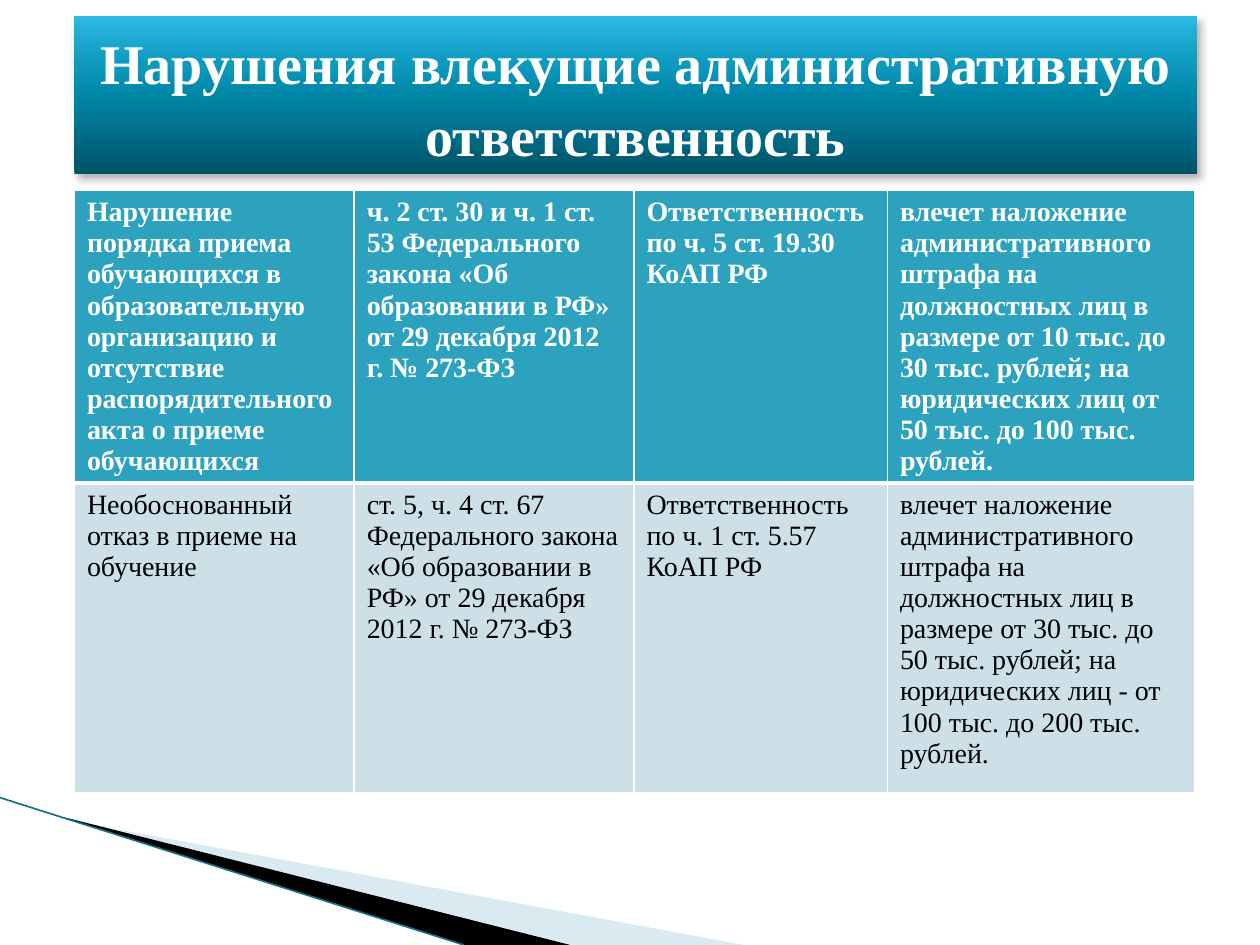
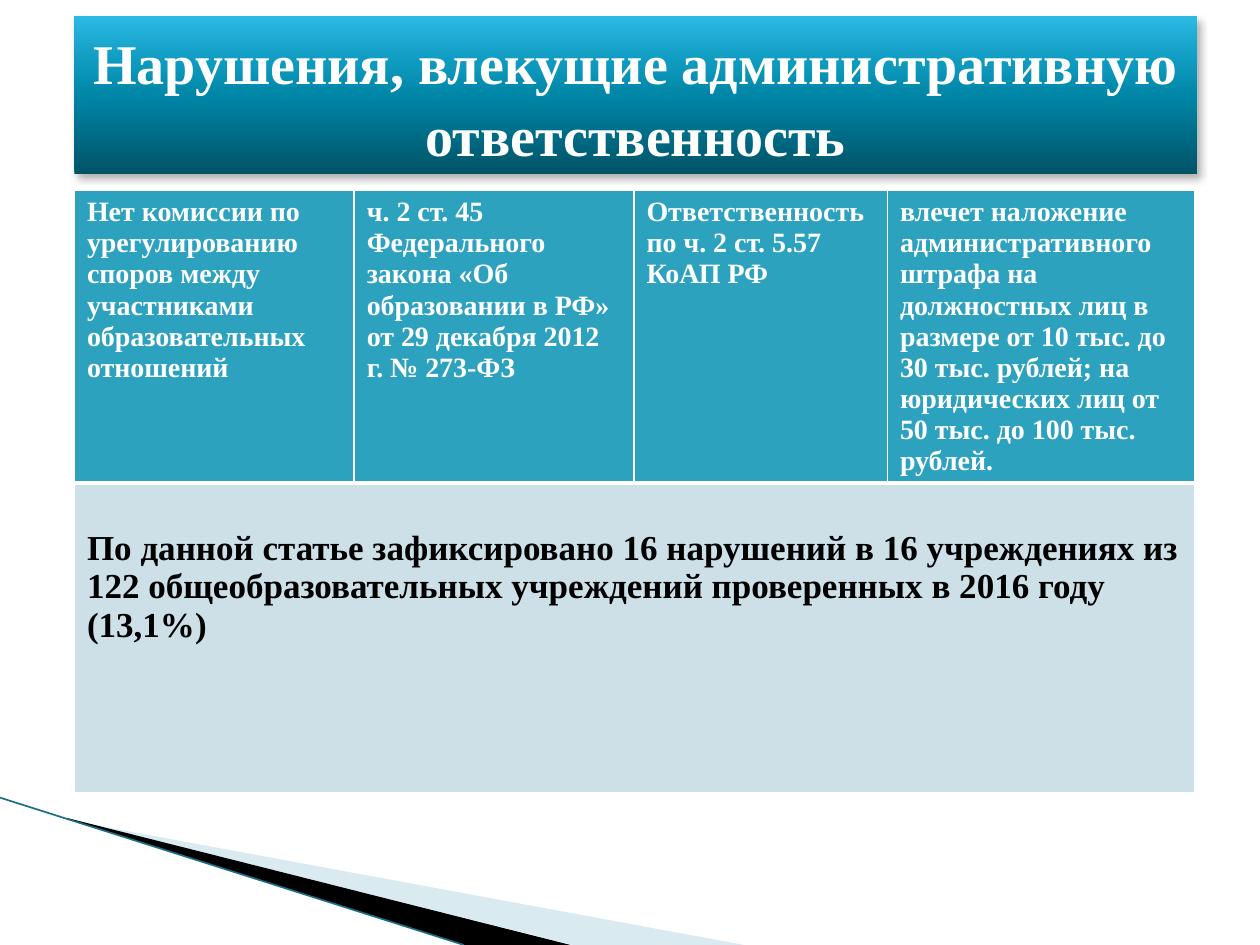
import pptx
import pptx.dml.color
import pptx.enum.dml
import pptx.enum.text
import pptx.oxml
import pptx.oxml.ns
import pptx.util
from lxml import etree

Cm = pptx.util.Cm
Pt = pptx.util.Pt
RGBColor = pptx.dml.color.RGBColor
qn = pptx.oxml.ns.qn

WHITE = RGBColor(0xFF, 0xFF, 0xFF)
BLACK = RGBColor(0x00, 0x00, 0x00)
HEADER_BLUE = RGBColor(0x2D, 0xA2, 0xBF)
BODY_BLUE = RGBColor(0xCD, 0xE0, 0xE8)
WEDGE_BLUE = RGBColor(0xA0, 0xCB, 0xDC)
EDGE_TEAL = RGBColor(0x1B, 0x6E, 0x85)
BAND_STOPS = (
    (0, RGBColor(0x00, 0x53, 0x67)),
    (50, RGBColor(0x00, 0x86, 0xA7)),
    (70, RGBColor(0x0E, 0x9A, 0xBE)),
    (100, RGBColor(0x2C, 0xB9, 0xE3)),
)
FONT = "Times New Roman"

TITLE_BOX = (Cm(1.5), Cm(0.33), Cm(22.63), Cm(3.18))
TABLE_BOX = (Cm(1.5), Cm(3.84), Cm(22.59), Cm(12.14))
CORNER = (Cm(0), Cm(16.08))
COLUMN_WIDTHS = (5.64, 5.64, 5.11, 6.2)
ROW_HEIGHTS = (5.89, 6.25)
LIGHT_WEDGE = ((1.4, 0.46), (15, 2.97), (11.55, 2.97), (1.4, 0.43))
DARK_WEDGE = ((1.35, 0.41), (11.5, 2.97), (9.35, 2.97), (1.37, 0.43))
EDGE_END = (9.35, 2.97)

FINE_10_TO_30 = (
    "влечет наложение административного штрафа на должностных лиц в размере "
    "от 10 тыс. до 30 тыс. рублей; на юридических лиц от 50 тыс. до 100 тыс. рублей."
)
FINE_30_TO_50 = (
    "влечет наложение административного штрафа на должностных лиц в размере "
    "от 30 тыс. до 50 тыс. рублей; на юридических лиц - от 100 тыс. до 200 тыс. рублей."
)
EDUCATION_LAW = "Федерального закона «Об образовании в РФ» от 29 декабря 2012 г. № 273-ФЗ"

ADMISSION_TITLE = "Нарушения влекущие административную ответственность"
ADMISSION_ROW = (
    "Нарушение порядка приема обучающихся в образовательную организацию "
    "и отсутствие распорядительного акта о приеме обучающихся",
    f"ч. 2 ст. 30 и ч. 1 ст. 53 {EDUCATION_LAW}",
    "Ответственность по ч. 5 ст. 19.30 КоАП РФ",
    FINE_10_TO_30,
)
REFUSAL_ROW = (
    "Необоснованный отказ в приеме на обучение",
    f"ст. 5, ч. 4 ст. 67 {EDUCATION_LAW}",
    "Ответственность по ч. 1 ст. 5.57 КоАП РФ",
    FINE_30_TO_50,
)
COMMISSION_TITLE = "Нарушения, влекущие административную ответственность"
COMMISSION_ROW = (
    "Нет комиссии по урегулированию споров между участниками образовательных отношений",
    f"ч. 2 ст. 45 {EDUCATION_LAW}",
    "Ответственность по ч. 2 ст. 5.57 КоАП РФ",
    FINE_10_TO_30,
)
COMMISSION_SUMMARY = (
    "По данной статье зафиксировано 16 нарушений в 16 учреждениях из 122 "
    "общеобразовательных учреждений проверенных в 2016 году (13,1%)"
)


def add_color(parent, color, alpha=100):
    """Add an RGB colour element with an opacity in percent."""
    element = etree.SubElement(parent, qn("a:srgbClr"), val=str(color))
    if alpha < 100:
        etree.SubElement(element, qn("a:alpha"), val=str(alpha * 1000))
    return element


def style_text(text_frame, size, color, bold):
    """Format every run of a text frame."""
    for paragraph in text_frame.paragraphs:
        for run in paragraph.runs:
            run.font.name = FONT
            run.font.size = Pt(size)
            run.font.bold = bold
            run.font.color.rgb = color


def add_wedge(slide, corner, points, color, alpha=100):
    """Draw one filled wedge from points in centimetres off the corner."""
    left, top = corner
    spots = [(left + Cm(x), top + Cm(y)) for x, y in points]
    builder = slide.shapes.build_freeform(*spots[0])
    builder.add_line_segments(spots[1:])
    wedge = builder.convert_to_shape()
    wedge.shadow.inherit = False
    wedge.fill.solid()
    wedge.fill.fore_color.rgb = color
    wedge.line.fill.background()
    if alpha < 100:
        tint = wedge.fill._xPr.find(".//" + qn("a:srgbClr"))
        etree.SubElement(tint, qn("a:alpha"), val=str(alpha * 1000))


def add_corner(slide, corner):
    """Draw the wedges and the thin edge in the lower left corner."""
    add_wedge(slide, corner, LIGHT_WEDGE, WEDGE_BLUE, 40)
    add_wedge(slide, corner, DARK_WEDGE, BLACK)
    left, top = corner
    edge = slide.shapes.add_connector(
        pptx.enum.shapes.MSO_CONNECTOR.STRAIGHT,
        left, top, left + Cm(EDGE_END[0]), top + Cm(EDGE_END[1]),
    )
    edge.line.color.rgb = EDGE_TEAL
    edge.line.width = Pt(0.95)
    etree.SubElement(edge._element.spPr, qn("a:effectLst"))


def add_title(slide, box, wording):
    """Turn the title placeholder into the shaded gradient band."""
    title = slide.shapes.title
    title.left, title.top, title.width, title.height = box
    title.fill.gradient()
    title.fill.gradient_angle = 90
    properties = title._element.spPr
    stops = properties.find(".//" + qn("a:gsLst"))
    for stop in list(stops):
        stops.remove(stop)
    for position, color in BAND_STOPS:
        add_color(etree.SubElement(stops, qn("a:gs"), pos=str(position * 1000)), color)

    effects = etree.SubElement(properties, qn("a:effectLst"))
    shadow = etree.SubElement(
        effects, qn("a:outerShdw"),
        blurRad=str(Pt(4.5)), dist=str(Pt(2.6)), dir=str(53 * 60000), rotWithShape="0",
    )
    add_color(shadow, BLACK, 30)

    frame = title.text_frame
    frame.text = wording
    frame.word_wrap = True
    frame.auto_size = pptx.enum.text.MSO_AUTO_SIZE.NONE
    frame.vertical_anchor = pptx.enum.text.MSO_ANCHOR.MIDDLE
    frame.paragraphs[0].alignment = pptx.enum.text.PP_ALIGN.CENTER
    frame.paragraphs[0].line_spacing = 1.08
    style_text(frame, 32, WHITE, True)


def set_borders(cell, widths):
    """Give a cell white borders, with widths for left, right, top and bottom."""
    properties = cell._tc.get_or_add_tcPr()
    for index, (side, width) in enumerate(zip("LRTB", widths)):
        border = etree.Element(qn(f"a:ln{side}"), w=str(Pt(width)))
        add_color(etree.SubElement(border, qn("a:solidFill")), WHITE)
        properties.insert(index, border)


def fill_row(table, row, wordings, fill, color, bold, borders, size=16):
    """Write and format the cells of one table row."""
    for column, cell in enumerate(table.rows[row].cells):
        cell.fill.solid()
        cell.fill.fore_color.rgb = fill
        set_borders(cell, borders)
        if column < len(wordings):
            cell.text_frame.text = wordings[column]
            style_text(cell.text_frame, size, color, bold)


def add_violations(slide, box, header):
    """Add the two-row table with its header row and return it."""
    table = slide.shapes.add_table(len(ROW_HEIGHTS), len(COLUMN_WIDTHS), *box).table
    table.horz_banding = False
    for column, width in zip(table.columns, COLUMN_WIDTHS):
        column.width = Cm(width)
    for row, height in zip(table.rows, ROW_HEIGHTS):
        row.height = Cm(height)
    fill_row(table, 0, header, HEADER_BLUE, WHITE, True, (1, 1, 1, 3))
    return table


def add_violation_slide(deck, title, header):
    """Add a slide with corner, title band and table, and return the table."""
    slide = deck.slides.add_slide(deck.slide_layouts[5])
    add_corner(slide, CORNER)
    add_title(slide, TITLE_BOX, title)
    return add_violations(slide, TABLE_BOX, header)


def main():
    """Build and save the two slides."""
    deck = pptx.Presentation()
    deck.slide_width, deck.slide_height = Cm(25.4), Cm(19.05)
    body_borders = (1, 1, 3, 1)

    admission = add_violation_slide(deck, ADMISSION_TITLE, ADMISSION_ROW)
    fill_row(admission, 1, REFUSAL_ROW, BODY_BLUE, BLACK, False, body_borders)

    commission = add_violation_slide(deck, COMMISSION_TITLE, COMMISSION_ROW)
    summary = commission.cell(1, 0)
    summary.merge(commission.cell(1, len(COLUMN_WIDTHS) - 1))
    fill_row(commission, 1, (COMMISSION_SUMMARY,), BODY_BLUE, BLACK, True, body_borders, 20)
    summary.margin_top = Cm(0.92)

    deck.save("out.pptx")


if __name__ == "__main__":
    main()
